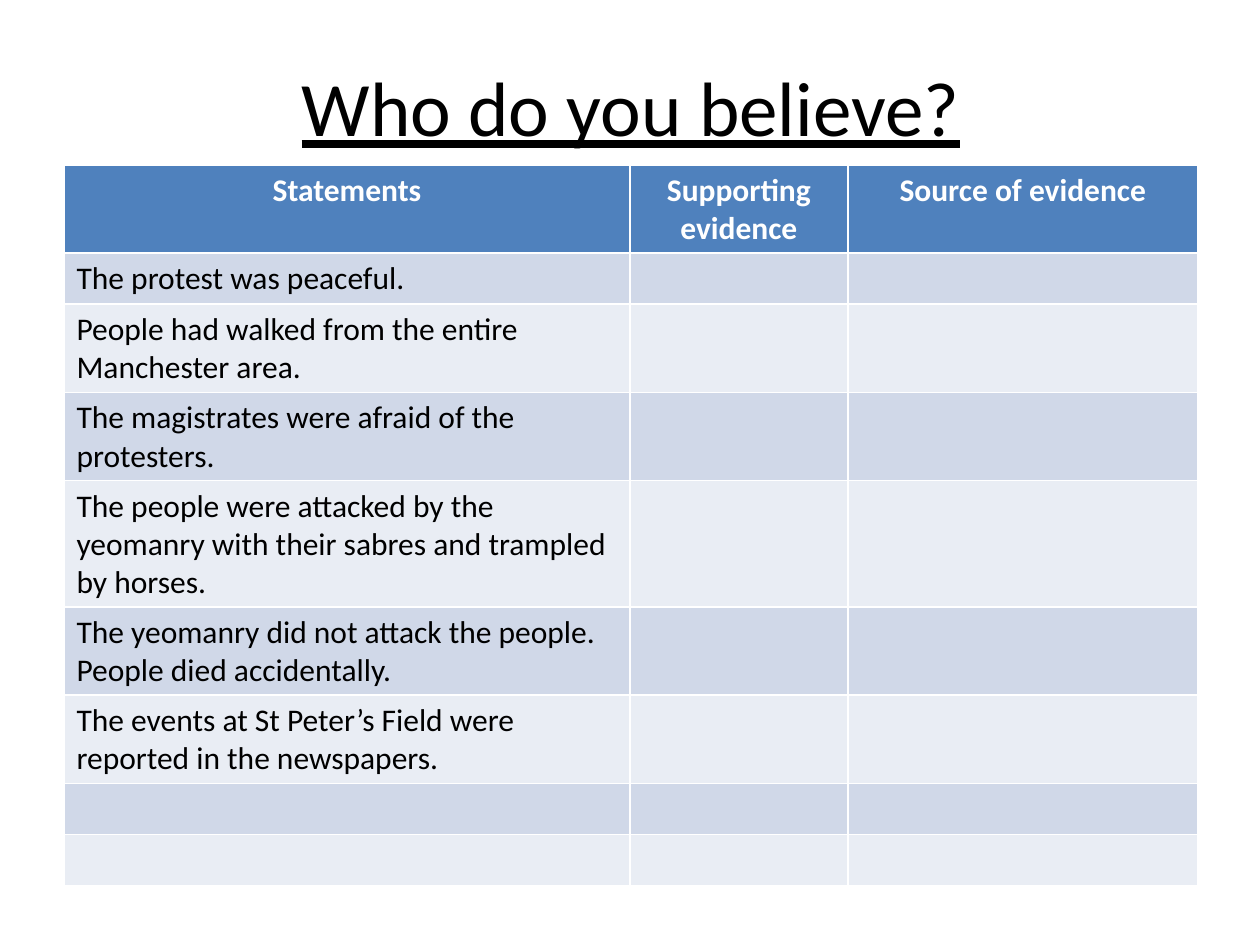
from pptx import Presentation
from pptx import util as u
from pptx.dml import color
from pptx.enum import text

EMU_PER_PX = 914400 / 126
COLORS = {
    "ink": "000000",
    "header_text": "FFFFFF",
    "header": "4F81BD",
    "band_dark": "D0D8E8",
    "band_light": "E9EDF4",
}
TITLE = {"size": u.Pt(44), "underline": True}
HEADER = {"size": u.Pt(18), "bold": True}
BODY = {"size": u.Pt(18), "bold": False}

HEADINGS = ["Statements", "Supporting evidence", "Source of evidence"]
STATEMENTS = [
    "The protest was peaceful.",
    "People had walked from the entire Manchester area.",
    "The magistrates were afraid of the protesters.",
    "The people were attacked by the yeomanry with their sabres and trampled by horses.",
    "The yeomanry did not attack the people. People died accidentally.",
    "The events at St Peter’s Field were reported in the newspapers.",
    "",
    "",
]


def px(n):
    return u.Emu(round(n * EMU_PER_PX))


def rgb(name):
    return color.RGBColor.from_string(COLORS[name])


class Deck:
    font = "Calibri"

    def __init__(self, width, height):
        self.prs = Presentation()
        self.prs.slide_width, self.prs.slide_height = px(width), px(height)
        self.s = self.prs.slides.add_slide(self.prs.slide_layouts[6])

    def add_text(self, tf, content, ink, fmt, align):
        p = tf.paragraphs[0]
        p.alignment = align
        r = p.add_run()
        r.text = content
        r.font.name = self.font
        r.font.color.rgb = rgb(ink)
        for key, value in fmt.items():
            setattr(r.font, key, value)

    def title(self, content, x, y, w, h):
        tf = self.s.shapes.add_textbox(px(x), px(y), px(w), px(h)).text_frame
        tf.word_wrap = True
        tf.vertical_anchor = text.MSO_ANCHOR.MIDDLE
        self.add_text(tf, content, "ink", TITLE, text.PP_ALIGN.CENTER)

    def table(self, rows, x, y, widths, row_height, height):
        sp = self.s.shapes.add_table(
            len(rows), len(widths), px(x), px(y), px(sum(widths)), px(height))
        for col, width in zip(sp.table.columns, widths):
            col.width = px(width)
        for i, (row, values) in enumerate(zip(sp.table.rows, rows)):
            row.height = px(row_height)
            if i == 0:
                fill, ink, fmt, align = "header", "header_text", HEADER, text.PP_ALIGN.CENTER
            else:
                fill = "band_dark" if i % 2 else "band_light"
                ink, fmt, align = "ink", BODY, text.PP_ALIGN.LEFT
            for cell, value in zip(row.cells, values):
                cell.fill.solid()
                cell.fill.fore_color.rgb = rgb(fill)
                if value:
                    self.add_text(cell.text_frame, value, ink, fmt, align)
        sp.height = px(height)


def main():
    deck = Deck(1260, 945)
    deck.title("Who do you believe?", 64, 27, 1134, 157)
    rows = [HEADINGS] + [[statement, "", ""] for statement in STATEMENTS]
    deck.table(rows, 64, 165, [566, 218, 350], 51, 721)
    deck.prs.save("out.pptx")


if __name__ == "__main__":
    main()
